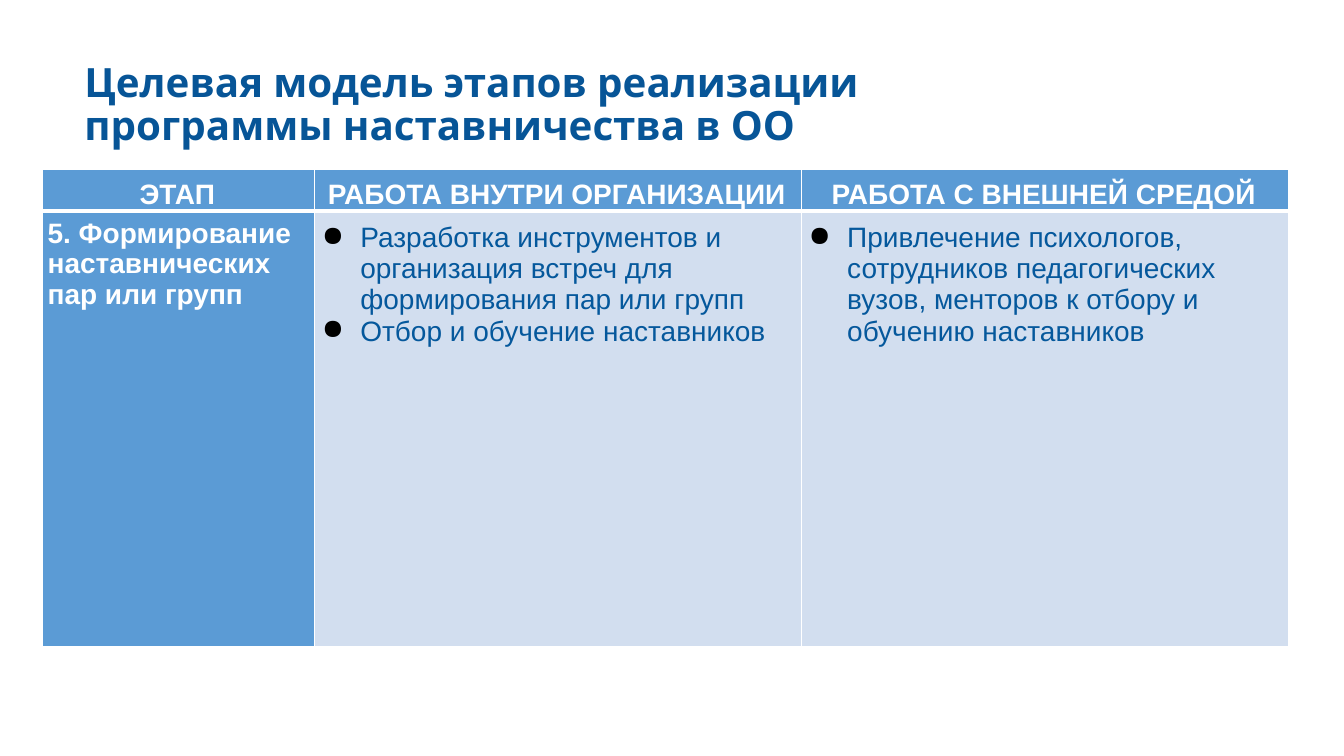
from lxml.etree import SubElement, fromstring
from pptx import Presentation
from pptx.dml.color import RGBColor
from pptx.enum.text import MSO_ANCHOR as Anchor, PP_ALIGN as Align
from pptx.oxml.ns import nsdecls, qn
from pptx.util import Cm, Pt

COLORS = {"title": "075597", "text": "05589C", "head": "5B9BD5",
          "body": "D2DEEF", "white": "FFFFFF", "bullet": "000000"}
HEAD = {"size": Pt(20), "name": "Arial", "bold": True}
BODY = {**HEAD, "bold": False}
TITLE = {"size": Pt(28.8), "name": "Karla", "bold": True}

HEADERS = ["ЭТАП ", "РАБОТА ВНУТРИ ОРГАНИЗАЦИИ ", "РАБОТА С ВНЕШНЕЙ СРЕДОЙ "]
STAGE = "5. Формирование наставнических пар или групп"
TASKS = [
    ["Разработка инструментов и организация встреч для формирования пар или групп",
     "Отбор и обучение наставников"],
    ["Привлечение психологов, сотрудников педагогических вузов, "
     "менторов к отбору и обучению наставников"],
]


class Deck:
    def __init__(self):
        self.prs = Presentation()
        self.prs.slide_width, self.prs.slide_height = Cm(33.87), Cm(19.05)
        self.s = self.prs.slides.add_slide(self.prs.slide_layouts[6])

    def put_text(self, p, text, style, color, bullet=False, **layout):
        if bullet:
            self.bullet(p)
        for name, value in layout.items():
            setattr(p, name, value)
        r = p.add_run()
        r.text = text
        for name, value in style.items():
            setattr(r.font, name, value)
        r.font.color.rgb = RGBColor.from_string(COLORS[color])

    def bullet(self, p):
        pPr = p._p.get_or_add_pPr()
        pPr.set("marL", str(Cm(0.97)))
        pPr.set("indent", str(-Cm(0.97)))
        color = SubElement(pPr, qn("a:buClr"))
        SubElement(color, qn("a:srgbClr"), val=COLORS["bullet"])
        SubElement(pPr, qn("a:buChar"), char="●")

    def title(self, text, *box):
        sp = self.s.shapes.add_textbox(*map(Cm, box))
        tf = sp.text_frame
        tf.word_wrap = True
        tf.vertical_anchor = Anchor.MIDDLE
        self.put_text(tf.paragraphs[0], text, TITLE, "title", line_spacing=0.9)

    def table(self, left, top, widths, heights):
        frame = self.s.shapes.add_table(len(heights), len(widths), Cm(left), Cm(top),
                                        Cm(sum(widths)), Cm(sum(heights)))
        table = frame.table
        for col, width in zip(table.columns, widths):
            col.width = Cm(width)
        for row, height in zip(table.rows, heights):
            row.height = Cm(height)
        return table

    def cell(self, cell, texts, style, color, fill, insets, borders,
             anchor=Anchor.TOP, **layout):
        """Fill one cell; borders gives the left, right, top, bottom widths in points."""
        cell.fill.solid()
        cell.fill.fore_color.rgb = RGBColor.from_string(COLORS[fill])
        cell.margin_left, cell.margin_top = map(Cm, insets)
        cell.margin_right = cell.margin_bottom = 0
        cell.vertical_anchor = anchor
        for i, (side, width) in enumerate(zip("LRTB", borders)):
            cell._tc.get_or_add_tcPr().insert(i, fromstring(
                f'<a:ln{side} {nsdecls("a")} w="{Pt(width)}"><a:solidFill>'
                f'<a:srgbClr val="{COLORS["white"]}"/></a:solidFill></a:ln{side}>'))
        tf = cell.text_frame
        for i, text in enumerate(texts):
            p = tf.add_paragraph() if i else tf.paragraphs[0]
            self.put_text(p, text, style, color, **layout)


def main():
    deck = Deck()
    table = deck.table(1.07, 4.27, [6.86, 12.27, 12.27], [1.04, 10.97])
    narrow, wide = (0.13, 0.2), (0.18, 0.28)
    above, below = (1, 1, 1, 3), (1, 1, 3, 1)
    for col, text in enumerate(HEADERS):
        deck.cell(table.cell(0, col), [text], HEAD, "white", "head", narrow, above,
                  Anchor.MIDDLE, alignment=Align.CENTER, line_spacing=1.07)
    deck.cell(table.cell(1, 0), [STAGE], HEAD, "white", "head", narrow, below,
              line_spacing=0.98)
    for col, tasks in enumerate(TASKS, 1):
        deck.cell(table.cell(1, col), tasks, BODY, "text", "body", wide, below,
                  bullet=True)
    deck.title("Целевая модель этапов реализации программы наставничества в ОО",
               1.88, 1.47, 21.13, 2.39)
    deck.prs.save("out.pptx")


if __name__ == "__main__":
    main()
